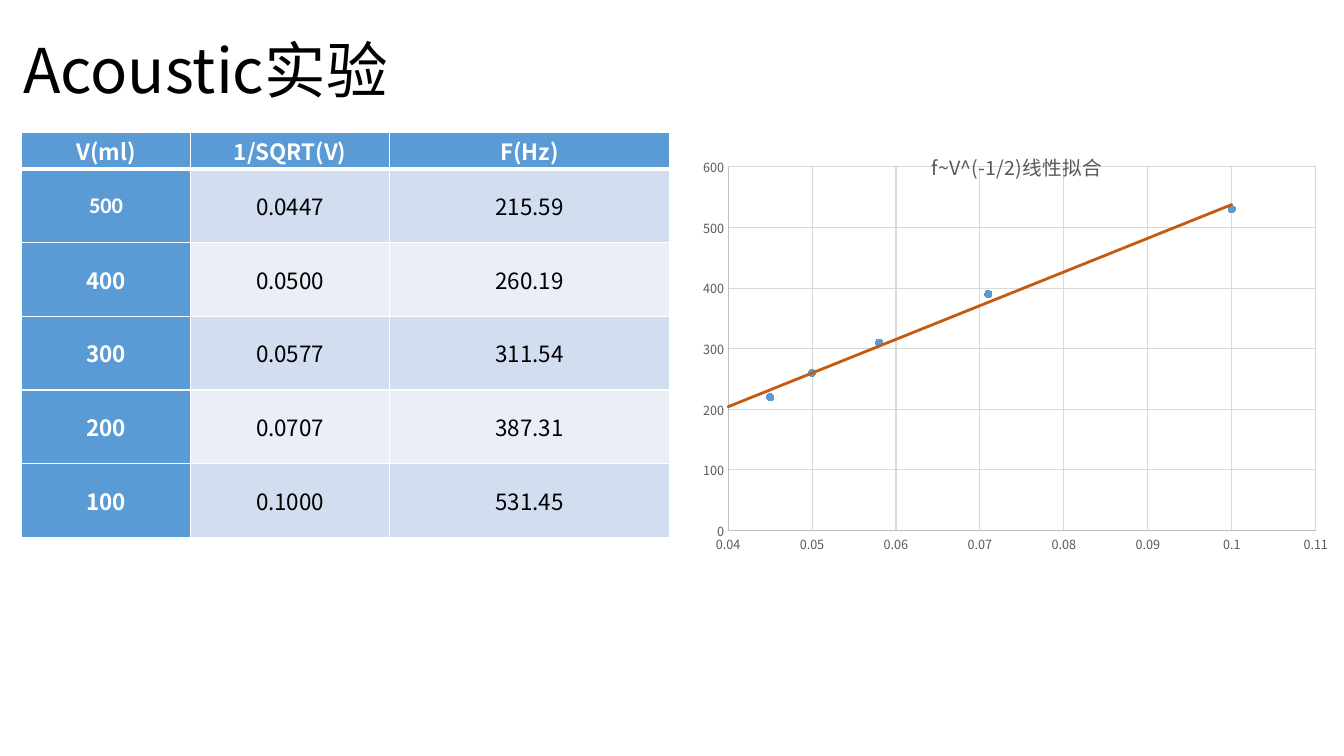
from lxml import etree
from pptx import Presentation
from pptx.chart.data import XyChartData
from pptx.dml.color import RGBColor
from pptx.enum import chart as ch, text
from pptx.oxml import parse_xml
from pptx.oxml.ns import nsdecls, qn
from pptx.util import Pt

TITLE = "Acoustic实验"
HEADERS = ["V(ml)", "1/SQRT(V)", "F(Hz)"]
ROWS = [
    ("500", "0.0447", "215.59"),
    ("400", "0.0500", "260.19"),
    ("300", "0.0577", "311.54"),
    ("200", "0.0707", "387.31"),
    ("100", "0.1000", "531.45"),
]
CHART_TITLE = "f~V^(-1/2)线性拟合"
POINTS = [(0.045, 220), (0.05, 260), (0.058, 310), (0.071, 390), (0.1, 530)]
COLORS = {
    "white": "FFFFFF", "black": "000000", "blue": "5B9BD5",
    "odd": "D2DEEF", "even": "EAEFF7", "label": "595959",
    "axis": "BFBFBF", "grid": "D9D9D9", "trend": "C55A11",
}
FONT = "Noto Sans CJK SC"
TOP = 94.3
COL_WIDTHS = [120.5, 142.5, 199.5]
HEAD_HEIGHT, ROW_HEIGHT = 26.5, 52.6
PLOT = {"x": 0.058, "y": 0.078, "w": 0.899, "h": 0.813}


def rgb(name):
    return RGBColor.from_string(COLORS[name])


def write(tf, words, size=16, color="black", bold=False, font=FONT,
          align=text.PP_ALIGN.CENTER, spacing=None):
    p = tf.paragraphs[0]
    p.alignment = align
    p.line_spacing = spacing
    r = p.add_run()
    r.text = words
    r.font.size, r.font.bold, r.font.name = Pt(size), bold, font
    r.font.color.rgb = rgb(color)
    etree.SubElement(r._r.get_or_add_rPr(), qn("a:ea"), typeface=FONT)


def set_borders(cell, bottom):
    tc_pr = cell._tc.get_or_add_tcPr()
    widths = {"lnL": 1, "lnR": 1, "lnT": 1, "lnB": bottom}
    for i, (tag, width) in enumerate(widths.items()):
        tc_pr.insert(i, parse_xml(
            f'<a:{tag} {nsdecls("a")} w="{Pt(width)}"><a:solidFill>'
            f'<a:srgbClr val="{COLORS["white"]}"/></a:solidFill></a:{tag}>'))


def add_results_table(s):
    height = HEAD_HEIGHT + ROW_HEIGHT * len(ROWS)
    table = s.shapes.add_table(len(ROWS) + 1, len(HEADERS), Pt(15.5), Pt(TOP),
                               Pt(sum(COL_WIDTHS)), Pt(height)).table
    for column, width in zip(table.columns, COL_WIDTHS):
        column.width = Pt(width)
    for i, row in enumerate([HEADERS, *ROWS]):
        table.rows[i].height = Pt(ROW_HEIGHT if i else HEAD_HEIGHT)
        for j, words in enumerate(row):
            cell = table.cell(i, j)
            strong = i == 0 or j == 0
            cell.fill.solid()
            cell.fill.fore_color.rgb = rgb(
                "blue" if strong else "odd" if i % 2 else "even")
            cell.margin_left = cell.margin_right = Pt(5)
            cell.margin_top = cell.margin_bottom = 0
            cell.vertical_anchor = text.MSO_ANCHOR.MIDDLE
            write(cell.text_frame, words, bold=strong,
                  color="white" if strong else "black",
                  font="Calibri" if words == "500" else FONT)
            set_borders(cell, bottom=1 if i else 3)


def format_axis(axis, low, high, step):
    axis.minimum_scale, axis.maximum_scale, axis.major_unit = low, high, step
    axis.major_tick_mark = axis.minor_tick_mark = ch.XL_TICK_MARK.NONE
    axis.has_major_gridlines = True
    for part, color in ((axis, "axis"), (axis.major_gridlines, "grid")):
        part.format.line.color.rgb = rgb(color)
        part.format.line.width = Pt(0.75)
    labels = axis.tick_labels
    labels.number_format, labels.number_format_is_linked = "General", False
    labels.font.size, labels.font.name = Pt(9), FONT
    labels.font.color.rgb = rgb("label")


def add_trend_line(series):
    """Add a linear fit, extended back to the left edge of the plot."""
    trend = parse_xml(
        f'<c:trendline {nsdecls("c", "a")}><c:spPr><a:ln w="{Pt(2)}" cap="rnd">'
        f'<a:solidFill><a:srgbClr val="{COLORS["trend"]}"/></a:solidFill></a:ln>'
        '</c:spPr><c:trendlineType val="linear"/><c:backward val="0.005"/>'
        '<c:dispRSqr val="0"/><c:dispEq val="0"/></c:trendline>')
    series._element.find(qn("c:xVal")).addprevious(trend)


def set_plot_layout(chart):
    area = chart._chartSpace.chart.plotArea
    for old in area.findall(qn("c:layout")):
        area.remove(old)
    sizes = "".join(f'<c:{k} val="{v}"/>' for k, v in PLOT.items())
    area.insert(0, parse_xml(
        f'<c:layout {nsdecls("c")}><c:manualLayout><c:layoutTarget val="inner"/>'
        f'<c:xMode val="edge"/><c:yMode val="edge"/>{sizes}'
        '</c:manualLayout></c:layout>'))


def add_fit_chart(s):
    data = XyChartData()
    points = data.add_series("Series 1")
    for x, y in POINTS:
        points.add_data_point(x, y)
    chart = s.shapes.add_chart(ch.XL_CHART_TYPE.XY_SCATTER, Pt(493), Pt(TOP),
                               Pt(467), Pt(319.5), data).chart
    chart.has_legend = False
    chart.font.size, chart.font.name = Pt(10), FONT
    chart.font.color.rgb = rgb("black")
    chart.has_title = True
    write(chart.chart_title.text_frame, CHART_TITLE, size=14, color="label")
    chart.chart_title.include_in_layout = True
    format_axis(chart.category_axis, 0.04, 0.11, 0.01)
    format_axis(chart.value_axis, 0, 600, 100)
    plot = chart.plots[0]
    plot.vary_by_categories = False
    series = plot.series[0]
    series.format.line.fill.background()
    series.marker.style, series.marker.size = ch.XL_MARKER_STYLE.CIRCLE, 5
    series.marker.format.fill.solid()
    series.marker.format.fill.fore_color.rgb = rgb("blue")
    series.marker.format.line.color.rgb = rgb("blue")
    add_trend_line(series)
    set_plot_layout(chart)


def main():
    prs = Presentation()
    prs.slide_width, prs.slide_height = Pt(960), Pt(540)
    s = prs.slides.add_slide(prs.slide_layouts[5])
    title = s.shapes.title
    title.left, title.top, title.width, title.height = (
        Pt(9.4), Pt(0), Pt(828), Pt(104.4))
    title.text_frame.vertical_anchor = text.MSO_ANCHOR.MIDDLE
    write(title.text_frame, TITLE, size=44, align=text.PP_ALIGN.LEFT, spacing=0.9)
    add_results_table(s)
    add_fit_chart(s)
    prs.save("out.pptx")


if __name__ == "__main__":
    main()
